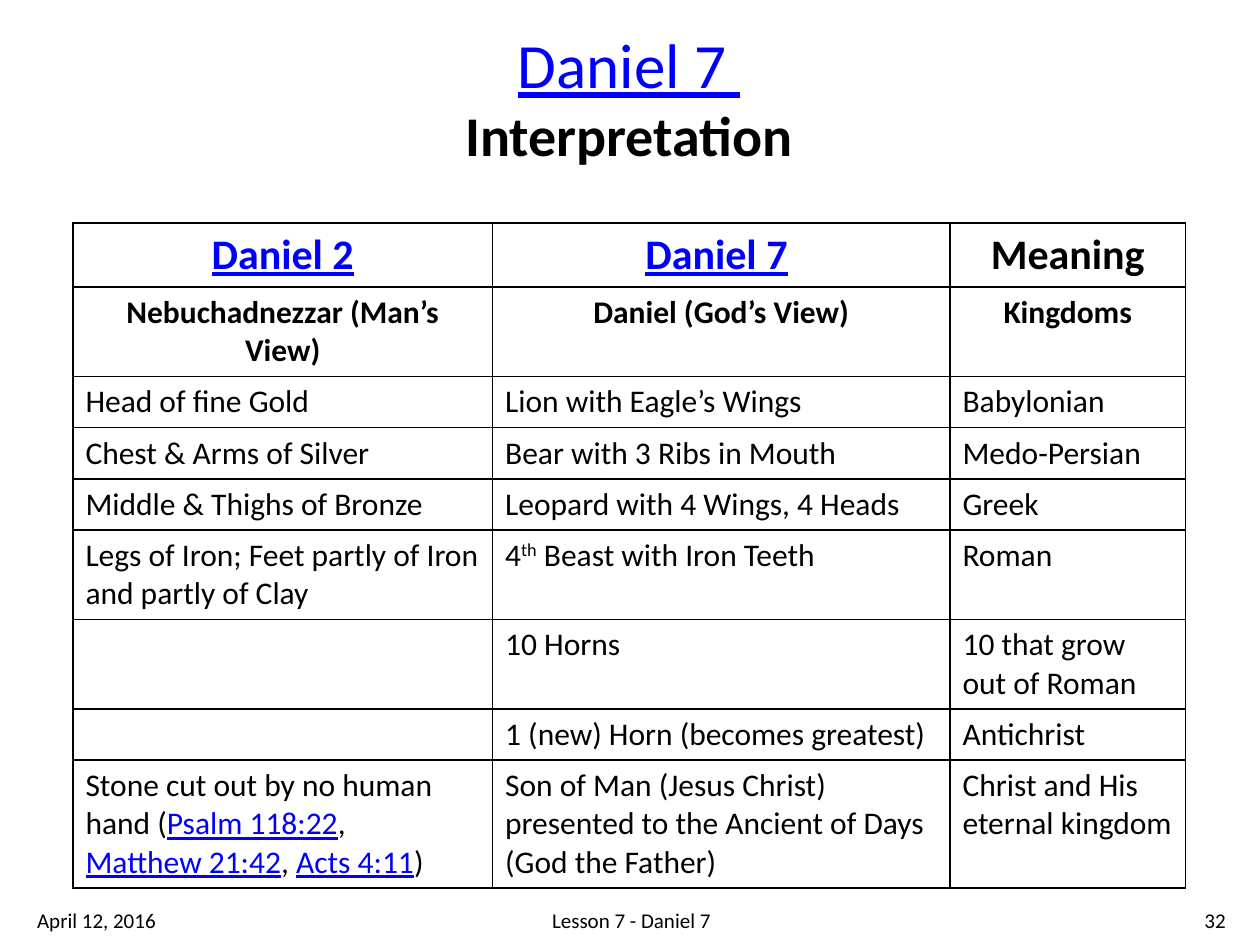
from dataclasses import dataclass

from lxml import etree
from pptx import Presentation
from pptx.dml.color import RGBColor
from pptx.enum.text import MSO_ANCHOR, MSO_AUTO_SIZE, PP_ALIGN
from pptx.oxml.ns import qn
from pptx.util import Cm, Pt

LEFT, CENTER, RIGHT = PP_ALIGN.LEFT, PP_ALIGN.CENTER, PP_ALIGN.RIGHT
MIDDLE = MSO_ANCHOR.MIDDLE
NO_AUTOFIT = MSO_AUTO_SIZE.NONE
TITLE_ONLY = 5
PLAIN, LINK, SUPER, BREAK = "plain", "link", "super", "break"


@dataclass(frozen=True)
class Theme:
    font: str = "Calibri"
    ink: RGBColor = RGBColor(0, 0, 0)
    link: RGBColor = RGBColor(0, 0, 255)
    title: int = 36
    subtitle: int = 32
    heading: int = 24
    body: int = 18
    footer: int = 12
    border: int = 1


THEME = Theme()

COLUMN_WIDTHS = (8.46, 9.22, 4.75)
ROW_HEIGHT = 1.03

# Each cell is a list of (text, style) runs
HEADING_ROWS = [
    [[("Daniel 2", LINK)], [("Daniel 7", LINK), (" ", PLAIN)], [("Meaning", PLAIN)]],
    [[("Nebuchadnezzar (Man’s View)", PLAIN)], [("Daniel (God’s View)", PLAIN)],
     [("Kingdoms", PLAIN)]],
]
BODY_ROWS = [
    [[("Head of fine Gold", PLAIN)], [("Lion with Eagle’s Wings", PLAIN)],
     [("Babylonian", PLAIN)]],
    [[("Chest & Arms of Silver", PLAIN)], [("Bear with 3 Ribs in Mouth", PLAIN)],
     [("Medo-Persian", PLAIN)]],
    [[("Middle & Thighs of Bronze", PLAIN)], [("Leopard with 4 Wings, 4 Heads", PLAIN)],
     [("Greek", PLAIN)]],
    [[("Legs of Iron; Feet partly of Iron and partly of Clay", PLAIN)],
     [("4", PLAIN), ("th", SUPER), (" Beast with Iron Teeth", PLAIN)],
     [("Roman", PLAIN)]],
    [[], [("10 Horns", PLAIN)], [("10 that grow out of Roman", PLAIN)]],
    [[], [("1 (new) Horn (becomes greatest)", PLAIN)], [("Antichrist", PLAIN)]],
    [[("Stone cut out by no human hand (", PLAIN), ("Psalm 118:22", LINK),
      (",", PLAIN), ("", BREAK), ("Matthew 21:42", LINK), (", ", PLAIN),
      ("Acts 4:11", LINK), (")", PLAIN)],
     [("Son of Man (Jesus Christ) presented to the Ancient of Days (God the Father)",
       PLAIN)],
     [("Christ and His eternal kingdom", PLAIN)]],
]


def write_runs(paragraph, runs, size, align=LEFT, bold=False):
    paragraph.alignment = align
    paragraph.font.size = Pt(size)
    for text, style in runs:
        if style == BREAK:
            paragraph.add_line_break()
            continue
        run = paragraph.add_run()
        run.text = text
        font = run.font
        font.name, font.size, font.bold = THEME.font, Pt(size), bold
        font.color.rgb = THEME.link if style == LINK else THEME.ink
        font.underline = style == LINK
        if style == SUPER:
            run._r.get_or_add_rPr().set("baseline", "30000")


def place_title(slide, left, top, width, height):
    title = slide.shapes.title
    title.left, title.top, title.width, title.height = map(
        Cm, (left, top, width, height))
    frame = title.text_frame
    frame.word_wrap, frame.auto_size = True, NO_AUTOFIT
    frame.vertical_anchor = MIDDLE
    write_runs(frame.paragraphs[0], [("Daniel 7 ", LINK)], THEME.title, CENTER)
    write_runs(frame.add_paragraph(), [("Interpretation", PLAIN)],
               THEME.subtitle, CENTER, bold=True)


def style_cell(cell):
    cell.fill.background()
    properties = cell._tc.get_or_add_tcPr()
    # Borders come before the fill in the cell properties
    for index, side in enumerate(("a:lnL", "a:lnR", "a:lnT", "a:lnB")):
        line = etree.Element(qn(side), w=str(Pt(THEME.border)))
        fill = etree.SubElement(line, qn("a:solidFill"))
        etree.SubElement(fill, qn("a:srgbClr"), val=str(THEME.ink))
        properties.insert(index, line)


def place_table(slide, left, top):
    rows = HEADING_ROWS + BODY_ROWS
    table = slide.shapes.add_table(
        len(rows), len(COLUMN_WIDTHS), Cm(left), Cm(top),
        Cm(sum(COLUMN_WIDTHS)), Cm(ROW_HEIGHT * len(rows))).table
    table.first_row = table.horz_banding = False
    for column, width in zip(table.columns, COLUMN_WIDTHS):
        column.width = Cm(width)
    for row_index, row in enumerate(rows):
        table.rows[row_index].height = Cm(ROW_HEIGHT)
        is_heading = row_index < len(HEADING_ROWS)
        size = THEME.heading if row_index == 0 else THEME.body
        for column_index, runs in enumerate(row):
            cell = table.cell(row_index, column_index)
            style_cell(cell)
            write_runs(cell.text_frame.paragraphs[0], runs, size,
                       CENTER if is_heading else LEFT, bold=is_heading)


def place_footer(slide, left, top, width, height):
    # Offset from the left edge, width, text, alignment
    parts = (
        (0, 4.34, "April 12, 2016", LEFT),
        ((width - 17.58) / 2, 17.58, "Lesson 7 - Daniel 7", CENTER),
        (width - 1.9, 1.9, "32", RIGHT),
    )
    for offset, part_width, text, align in parts:
        box = slide.shapes.add_textbox(
            Cm(left + offset), Cm(top), Cm(part_width), Cm(height))
        frame = box.text_frame
        frame.word_wrap = True
        frame.vertical_anchor = MIDDLE
        write_runs(frame.paragraphs[0], [(text, PLAIN)], THEME.footer, align)


def main():
    presentation = Presentation()
    presentation.slide_width, presentation.slide_height = Cm(25.4), Cm(19.05)
    slide = presentation.slides.add_slide(presentation.slide_layouts[TITLE_ONLY])
    place_title(slide, 5.28, 0.36, 14.81, 3.18)
    place_table(slide, 1.47, 4.5)
    place_footer(slide, 0.5, 18.03, 24.46, 1.02)
    presentation.save("out.pptx")


if __name__ == "__main__":
    main()
